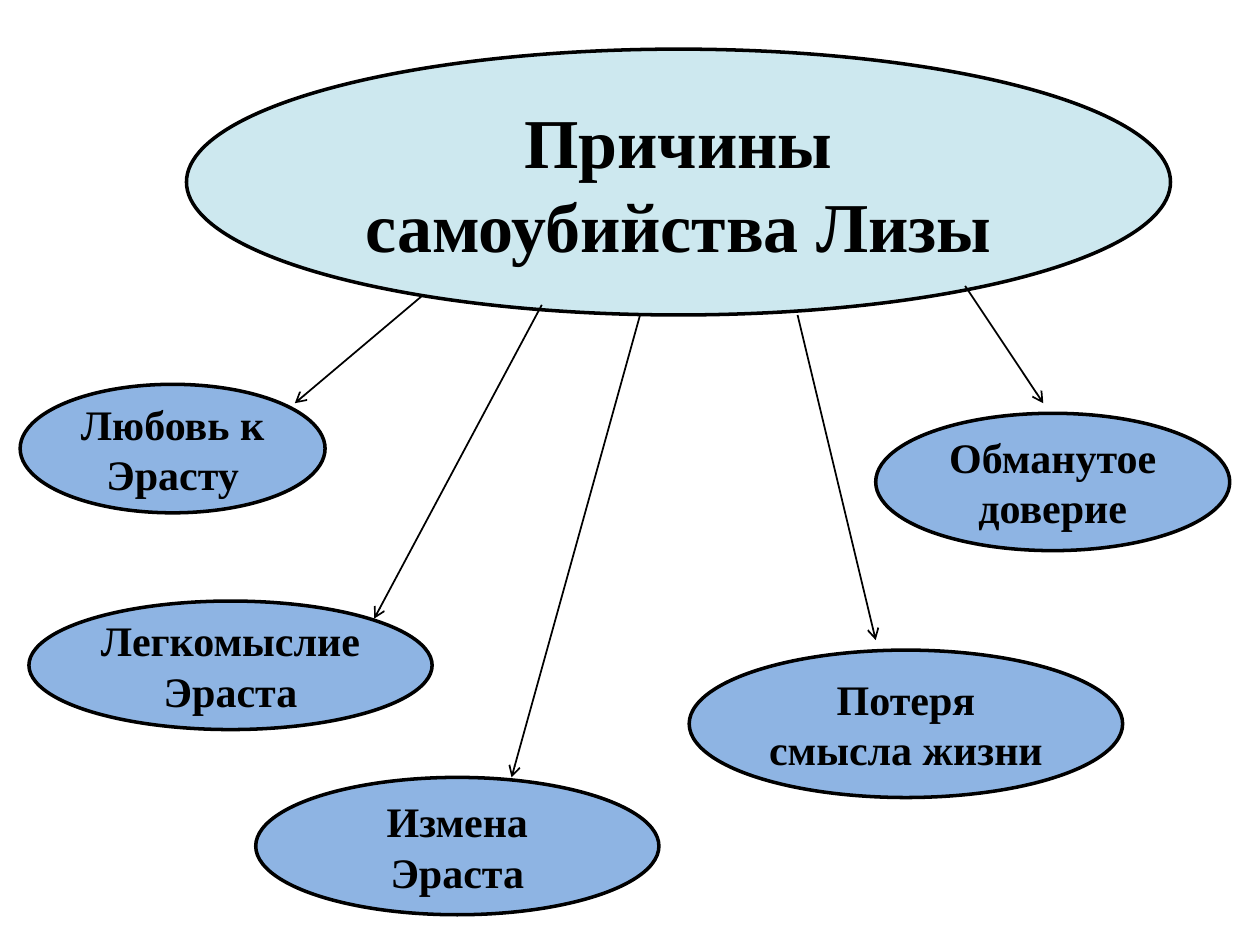
import lxml.etree
import pptx
import pptx.dml.color
import pptx.enum.shapes
import pptx.enum.text
import pptx.oxml.ns
import pptx.util

Inches = pptx.util.Inches
qn = pptx.oxml.ns.qn

TOPIC = ("Причины самоубийства Лизы", (1.48, 0.39, 7.81, 2.11))
REASONS = [
    ("Потеря смысла жизни", (5.47, 5.16, 3.44, 1.17), (6.33, 2.5), (6.95, 5.08)),
    ("Измена Эраста", (2.03, 6.17, 3.2, 1.09), (5.08, 2.5), (4.06, 6.17)),
    ("Легкомыслие Эраста", (0.23, 4.77, 3.2, 1.02), (4.3, 2.42), (2.97, 4.91)),
    ("Любовь к Эрасту", (0.16, 3.05, 2.42, 1.02), (3.36, 2.34), (2.34, 3.2)),
    ("Обманутое доверие", (6.95, 3.28, 2.81, 1.09), (7.66, 2.27), (8.28, 3.2)),
]


def color(hex_code):
    """Return the colour for a hex string."""
    return pptx.dml.color.RGBColor.from_string(hex_code)


def write_text(frame, text, size=24, bold=True, font="Times New Roman", ink="000000"):
    """Write one centred paragraph into a text frame."""
    frame.word_wrap = True
    frame.vertical_anchor = pptx.enum.text.MSO_ANCHOR.MIDDLE
    paragraph = frame.paragraphs[0]
    paragraph.alignment = pptx.enum.text.PP_ALIGN.CENTER
    run = paragraph.add_run()
    run.text = text
    run.font.size = pptx.util.Pt(size)
    run.font.bold = bold
    run.font.name = font
    run.font.color.rgb = color(ink)


def add_bubble(slide, text, box, fill="8EB4E3", opacity=100, size=24):
    """Add an outlined ellipse with centred text."""
    bubble = slide.shapes.add_shape(
        pptx.enum.shapes.MSO_SHAPE.OVAL, *(Inches(length) for length in box))
    bubble.shadow.inherit = False
    bubble.fill.solid()
    bubble.fill.fore_color.rgb = color(fill)
    if opacity < 100:
        tint = bubble.fill._xPr.find(qn("a:solidFill")).find(qn("a:srgbClr"))
        lxml.etree.SubElement(tint, qn("a:alpha"), val=str(opacity * 1000))
    bubble.line.color.rgb = color("000000")
    bubble.line.width = pptx.util.Pt(2)
    write_text(bubble.text_frame, text, size=size)


def add_arrow(slide, start, end):
    """Add a thin straight arrow from start to end."""
    arrow = slide.shapes.add_connector(
        pptx.enum.shapes.MSO_CONNECTOR.STRAIGHT,
        *(Inches(length) for length in start + end))
    arrow.line.color.rgb = color("000000")
    arrow.line.width = pptx.util.Pt(1)
    properties = arrow._element.spPr
    lxml.etree.SubElement(properties.find(qn("a:ln")), qn("a:tailEnd"), type="arrow")
    lxml.etree.SubElement(properties, qn("a:effectLst"))


def main():
    """Build the diagram of reasons and save it."""
    presentation = pptx.Presentation()
    presentation.slide_width = Inches(10)
    presentation.slide_height = Inches(7.5)
    slide = presentation.slides.add_slide(presentation.slide_layouts[6])
    topic, topic_box = TOPIC
    add_bubble(slide, topic, topic_box, fill="B7DEE8", opacity=69, size=40)
    for reason, box, _, _ in REASONS:
        add_bubble(slide, reason, box)
    for _, _, start, end in REASONS:
        add_arrow(slide, start, end)
    presentation.save("out.pptx")


if __name__ == "__main__":
    main()
